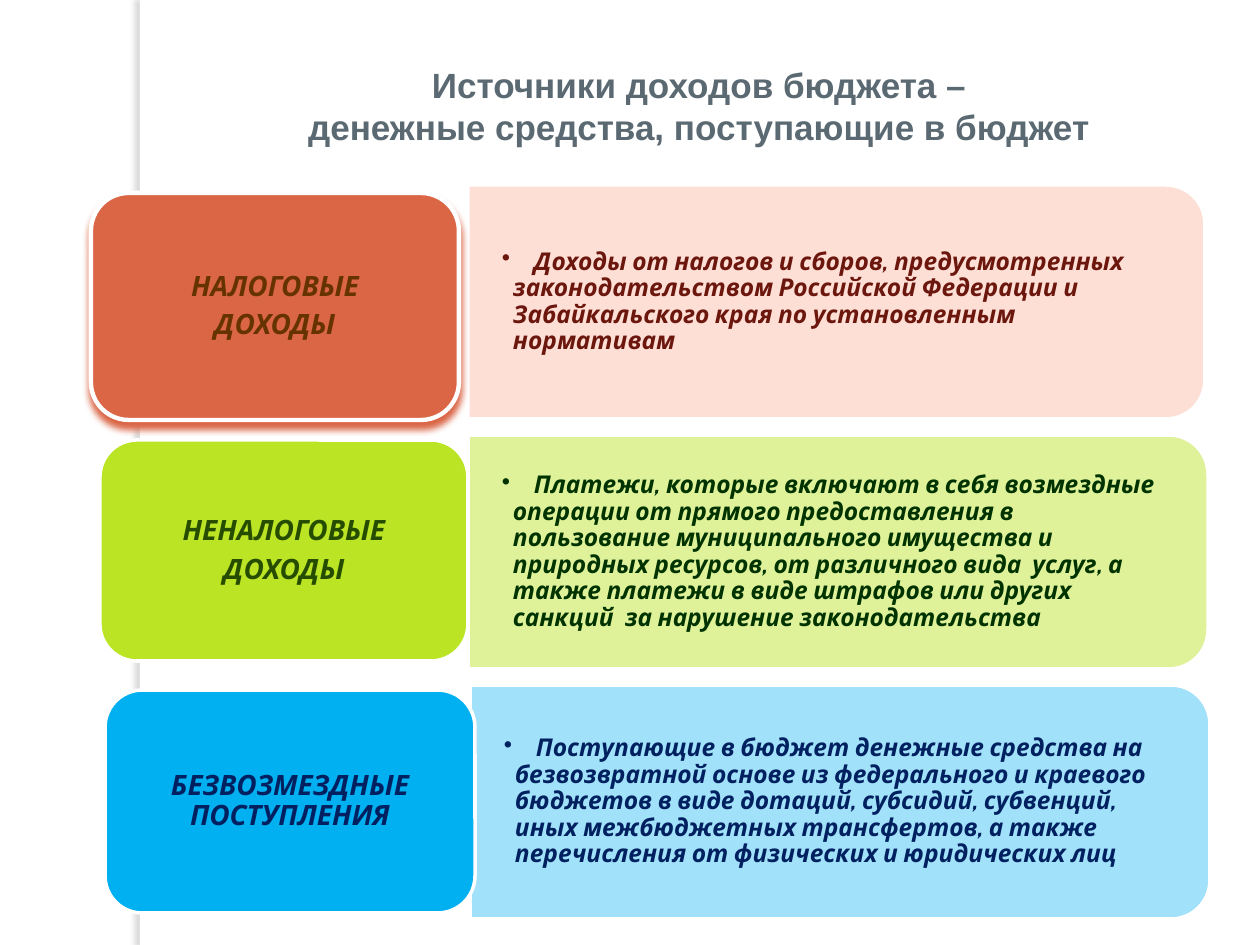
import pptx
import pptx.dml.color
import pptx.enum.shapes
import pptx.enum.text
import pptx.oxml
import pptx.oxml.ns
import pptx.util

PX = 914400 / 126
SHAPES = pptx.enum.shapes.MSO_SHAPE
ALIGN = pptx.enum.text.PP_ALIGN
MIDDLE = pptx.enum.text.MSO_ANCHOR.MIDDLE
NS = pptx.oxml.ns.nsdecls("a")

COLORS = {
    "white": "FFFFFF", "title": "5B6973", "bar_shadow": "737576",
    "tax": "DA6646", "tax_panel": "FEA890", "tax_label": "663300", "tax_text": "6C170E",
    "nontax": "BBE424", "nontax_panel": "BBE424", "nontax_label": "264C00",
    "nontax_text": "003300",
    "grants": "00B0F0", "grants_panel": "00B0F0", "grants_label": "002060",
    "grants_text": "002060",
}

# key, label box, label lines, label outline (pt), panel box, panel opacity (%), description
SOURCES = [
    ("tax", (91, 193, 368, 227), ["НАЛОГОВЫЕ", "ДОХОДЫ"], 2.5, (468, 185, 737, 234), 36,
     "Доходы от налогов и сборов, предусмотренных законодательством Российской Федерации "
     "и Забайкальского края по установленным нормативам"),
    ("nontax", (100, 440, 368, 221), ["НЕНАЛОГОВЫЕ", "ДОХОДЫ"], 2, (468, 435, 740, 234), 46,
     "Платежи, которые включают в себя возмездные операции от прямого предоставления "
     "в пользование муниципального имущества и природных ресурсов, от различного вида  "
     "услуг, а также платежи в виде штрафов или других санкций  за нарушение "
     "законодательства"),
    ("grants", (105, 690, 370, 223), ["БЕЗВОЗМЕЗДНЫЕ ПОСТУПЛЕНИЯ"], 2,
     (470, 685, 740, 234), 37,
     "Поступающие в бюджет денежные средства на безвозвратной основе из федерального "
     "и краевого бюджетов в виде дотаций, субсидий, субвенций, иных межбюджетных "
     "трансфертов, а также перечисления от физических и юридических лиц"),
]


def px(length):
    return pptx.util.Emu(round(length * PX))


def rgb(name):
    return pptx.dml.color.RGBColor.from_string(COLORS[name])


def add_block(slide, preset, box, fill, line_width=None):
    block = slide.shapes.add_shape(preset, *map(px, box))
    block.shadow.inherit = False
    block.fill.solid()
    block.fill.fore_color.rgb = rgb(fill)
    if line_width:
        block.line.color.rgb = rgb("white")
        block.line.width = pptx.util.Pt(line_width)
    else:
        block.line.fill.background()
    return block


def add_shadow(block, color, opacity, size, angle):
    """Outer shadow whose blur and distance are both size points."""
    effects = block._element.spPr.find(pptx.oxml.ns.qn("a:effectLst"))
    length = pptx.util.Pt(size)
    effects.append(pptx.oxml.parse_xml(
        f'<a:outerShdw {NS} blurRad="{length}" dist="{length}" dir="{angle * 60000}" '
        f'algn="ctr" rotWithShape="0"><a:srgbClr val="{COLORS[color]}">'
        f'<a:alpha val="{opacity * 1000}"/></a:srgbClr></a:outerShdw>'))


def set_frame(frame, inset_x, inset_y):
    frame.word_wrap = True
    frame.vertical_anchor = MIDDLE
    frame.margin_left = frame.margin_right = px(inset_x)
    frame.margin_top = frame.margin_bottom = px(inset_y)


def set_font(paragraph, name, size, color, italic=False):
    font = paragraph.font
    font.name, font.size = name, pptx.util.Pt(size)
    font.bold, font.italic = True, italic
    font.color.rgb = rgb(color)


def add_title(slide, box):
    title = slide.shapes.title
    title.left, title.top, title.width, title.height = map(px, box)
    set_frame(title.text_frame, 13, 6)
    title.text_frame.text = "Источники доходов бюджета –\vденежные средства, поступающие в бюджет"
    heading = title.text_frame.paragraphs[0]
    heading.alignment = ALIGN.CENTER
    set_font(heading, "Arial", 20, "title")


def add_side_bar(slide, box):
    bar = add_block(slide, SHAPES.RECTANGLE, box, "white")
    add_shadow(bar, "bar_shadow", 25, 3, 180)


def add_panel(slide, box, key, opacity, description):
    """Panel rounded on its right side, with one bulleted paragraph over it."""
    left, top, width, height = box
    turned = (left + (width - height) / 2, top + (height - width) / 2, height, width)
    panel = add_block(slide, SHAPES.ROUND_2_SAME_RECTANGLE, turned, f"{key}_panel", 2)
    panel.rotation = 90
    color = panel._element.spPr.find(".//" + pptx.oxml.ns.qn("a:srgbClr"))
    color.append(pptx.oxml.parse_xml(f'<a:alpha {NS} val="{opacity * 1000}"/>'))

    corner = 11
    inner = (left, top + corner, width - corner, height - 2 * corner)
    frame = slide.shapes.add_textbox(*map(px, inner)).text_frame
    set_frame(frame, 34, 18)
    frame.text = "\t" + description
    item = frame.paragraphs[0]
    item.line_spacing = 0.9
    item.space_after = pptx.util.Pt(2)
    set_font(item, "Cabin", 14, f"{key}_text", italic=True)
    props = item._p.get_or_add_pPr()
    props.set("marL", str(px(11)))
    props.set("indent", str(px(-11)))
    bullet = pptx.oxml.parse_xml(f'<a:buChar {NS} char="•"/>')
    tabs = pptx.oxml.parse_xml(
        f'<a:tabLst {NS}><a:tab pos="{px(32)}" algn="l"/></a:tabLst>')
    defaults = props.find(pptx.oxml.ns.qn("a:defRPr"))
    defaults.addprevious(bullet)
    defaults.addprevious(tabs)


def add_label(slide, box, key, lines, line_width):
    label = add_block(slide, SHAPES.ROUNDED_RECTANGLE, box, key, line_width)
    set_frame(label.text_frame, 9, 4)
    label.text_frame.text = "\n".join(lines)
    for line in label.text_frame.paragraphs:
        line.alignment = ALIGN.CENTER
        line.line_spacing = 0.9
        line.space_after = pptx.util.Pt(5)
        set_font(line, "Cabin", 16, f"{key}_label", italic=True)
    return label


def main():
    deck = pptx.Presentation()
    deck.slide_width, deck.slide_height = px(1260), px(945)
    slide = deck.slides.add_slide(deck.slide_layouts[5])
    add_side_bar(slide, (140, 0, 10, 945))
    for key, label_box, lines, line_width, panel_box, opacity, description in SOURCES:
        add_panel(slide, panel_box, key, opacity, description)
        label = add_label(slide, label_box, key, lines, line_width)
        if key == "tax":
            add_shadow(label, "tax", 100, 4, 90)
    add_title(slide, (243, 55, 912, 100))
    deck.save("out.pptx")


if __name__ == "__main__":
    main()
